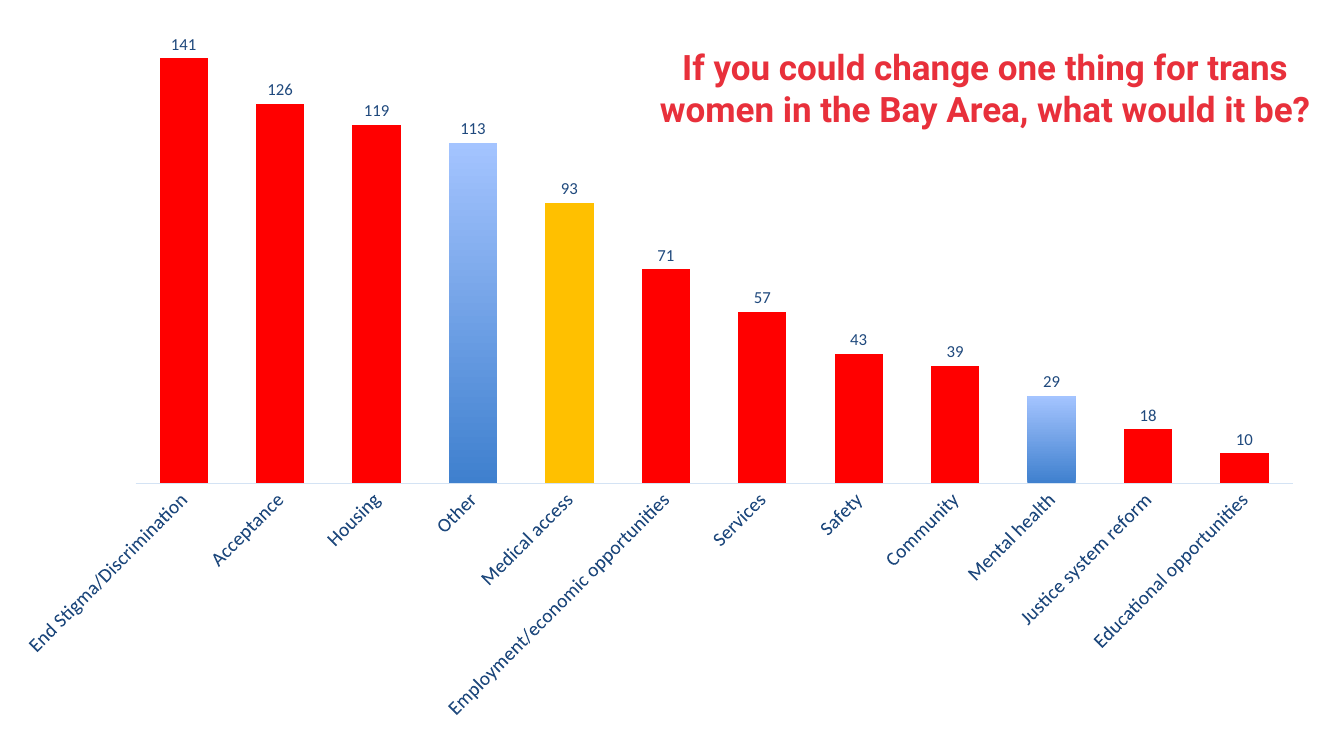
from lxml.etree import SubElement
from pptx import Presentation
from pptx.chart.data import CategoryChartData
from pptx.dml.color import RGBColor
from pptx.enum.chart import XL_CHART_TYPE, XL_LABEL_POSITION, XL_TICK_MARK
from pptx.enum.text import MSO_ANCHOR, MSO_AUTO_SIZE, PP_ALIGN
from pptx.oxml.ns import qn
from pptx.util import Inches, Pt

TITLE = "If you could change one thing for trans women in the Bay Area, what would it be?"
ANSWERS = [
    ("End Stigma/Discrimination", 141, "red"),
    ("Acceptance", 126, "red"),
    ("Housing", 119, "red"),
    ("Other", 113, None),
    ("Medical access", 93, "amber"),
    ("Employment/economic opportunities", 71, "red"),
    ("Services", 57, "red"),
    ("Safety", 43, "red"),
    ("Community", 39, "red"),
    ("Mental health", 29, None),
    ("Justice system reform", 18, "red"),
    ("Educational opportunities", 10, "red"),
]
PLOT = {"x": 0.085, "y": 0.019, "w": 0.901, "h": 0.645}
THEME = {
    "red": "FF0000", "amber": "FFC000", "gradient": ("3F80CE", "A4C4FF"),
    "axis": "D4E3F4",
    "title": {"name": "Roboto", "size": 25, "bold": True, "color": "E8303B"},
    "base": {"name": "Calibri", "size": 10, "color": "000000"},
    "category": {"name": "Calibri", "size": 14, "color": "1F497D"},
    "value": {"name": "Calibri", "size": 12, "color": "1F497D"},
}


def rgb(code):
    """Return a colour from its hex code."""
    return RGBColor.from_string(code)


def set_attrs(obj, values):
    """Set each named attribute of an object."""
    for name, value in values.items():
        setattr(obj, name, value)


def style(font, role):
    """Give a font the look of a theme role."""
    look = dict(THEME[role])
    font.color.rgb = rgb(look.pop("color"))
    set_attrs(font, {**look, "size": Pt(look["size"])})


def place_plot(chart):
    """Fix the inner plot area as fractions of the chart."""
    area = chart._chartSpace.chart.plotArea
    for old in area.findall(qn("c:layout")):
        area.remove(old)
    layout = area.makeelement(qn("c:layout"))
    area.insert(0, layout)
    manual = SubElement(layout, qn("c:manualLayout"))
    modes = {"layoutTarget": "inner", "xMode": "edge", "yMode": "edge"}
    for tag, value in {**modes, **PLOT}.items():
        SubElement(manual, qn(f"c:{tag}")).set("val", str(value))


def color_bars(series):
    """Give the series its gradient and the marked answers solid fills."""
    fill = series.format.fill
    fill.gradient()
    fill.gradient_angle = 90
    for stop, code in zip(fill.gradient_stops, THEME["gradient"]):
        stop.color.rgb = rgb(code)
    for i, (_, _, color) in enumerate(ANSWERS):
        if color:
            bar = series.points[i].format.fill
            bar.solid()
            bar.fore_color.rgb = rgb(THEME[color])


def add_answers(s):
    """Add the column chart of answers."""
    data = CategoryChartData()
    data.categories = [name for name, _, _ in ANSWERS]
    data.add_series("Series 1", [count for _, count, _ in ANSWERS])
    chart = s.shapes.add_chart(
        XL_CHART_TYPE.COLUMN_CLUSTERED, Inches(0.23), Inches(-0.13),
        Inches(12.77), Inches(7.42), data).chart
    set_attrs(chart, {"has_legend": False, "has_title": False})
    style(chart.font, "base")
    place_plot(chart)

    plot = chart.plots[0]
    set_attrs(plot, {"gap_width": 100, "overlap": -24,
                     "vary_by_categories": False, "has_data_labels": True})
    set_attrs(plot.data_labels, {"show_value": True,
                                 "position": XL_LABEL_POSITION.OUTSIDE_END})
    style(plot.data_labels.font, "value")
    color_bars(plot.series[0])

    set_attrs(chart.value_axis, {"minimum_scale": 0, "maximum_scale": 160,
                                 "has_major_gridlines": False, "visible": False})
    axis = chart.category_axis
    set_attrs(axis, {"major_tick_mark": XL_TICK_MARK.NONE,
                     "minor_tick_mark": XL_TICK_MARK.NONE})
    axis.format.line.color.rgb = rgb(THEME["axis"])
    axis.format.line.width = Pt(0.75)
    style(axis.tick_labels.font, "category")
    body = axis._element.find(qn("c:txPr")).find(qn("a:bodyPr"))
    set_attrs_xml = {"rot": "-2700000", "vert": "horz"}
    for name, value in set_attrs_xml.items():
        body.set(name, value)


def add_title(s):
    """Place the question over the chart."""
    title = s.shapes.title
    set_attrs(title, {"left": Inches(6.36), "top": Inches(0.24),
                      "width": Inches(6.82), "height": Inches(1.25)})
    s.shapes._spTree.append(title._element)
    tf = title.text_frame
    set_attrs(tf, {"word_wrap": True, "vertical_anchor": MSO_ANCHOR.MIDDLE,
                   "auto_size": MSO_AUTO_SIZE.NONE})
    p = tf.paragraphs[0]
    p.alignment = PP_ALIGN.CENTER
    r = p.add_run()
    r.text = TITLE
    style(r.font, "title")


def main():
    """Build and save the slide."""
    prs = Presentation()
    set_attrs(prs, {"slide_width": Inches(13.33), "slide_height": Inches(7.5)})
    s = prs.slides.add_slide(prs.slide_layouts.get_by_name("Title Only"))
    add_answers(s)
    add_title(s)
    prs.save("out.pptx")


if __name__ == "__main__":
    main()
